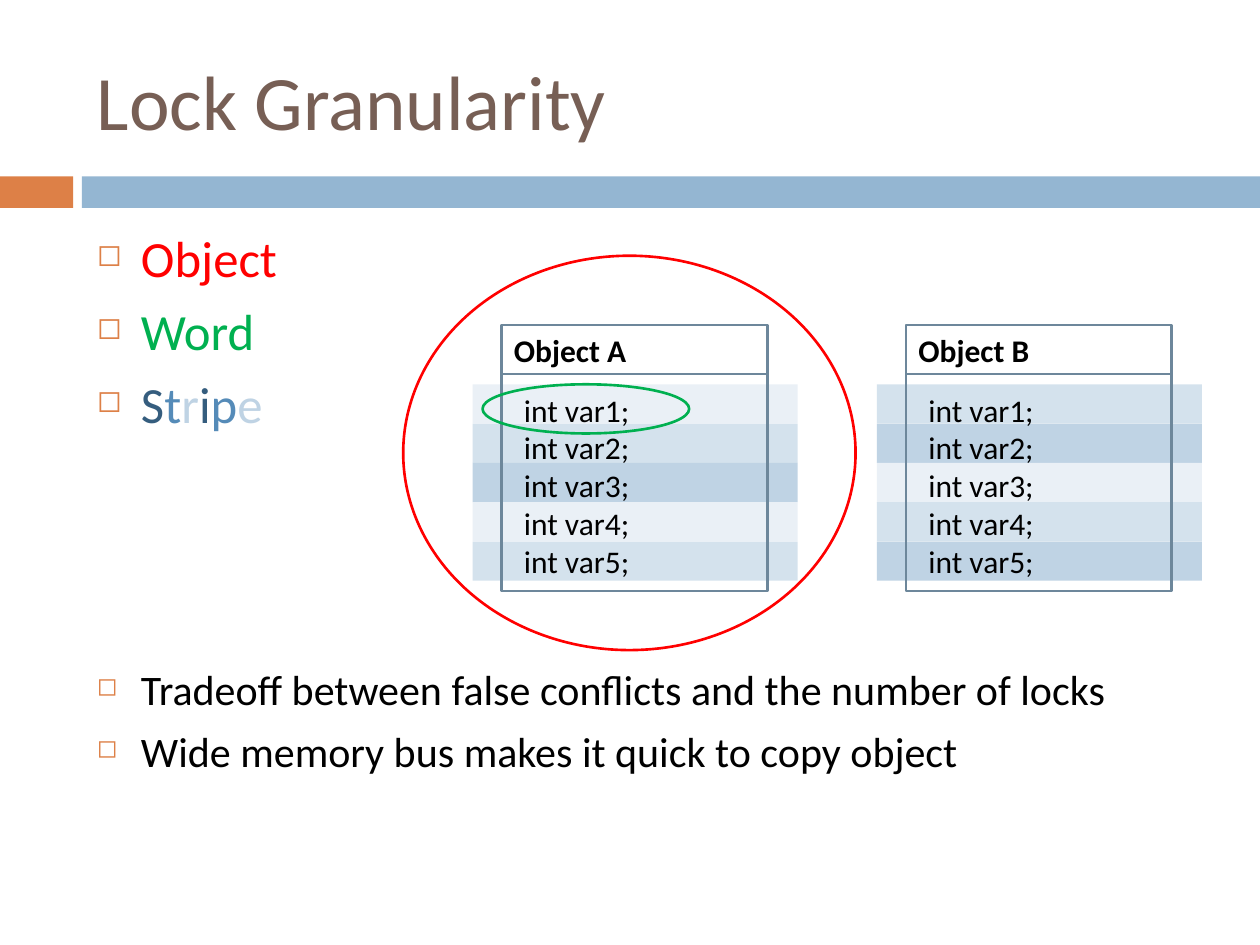
from dataclasses import dataclass
from itertools import cycle

from lxml import etree
from pptx import Presentation
from pptx import util as u
from pptx.dml.color import RGBColor
from pptx.enum import shapes, text
from pptx.oxml.ns import qn


@dataclass
class Theme:
    font: str = "Calibri"
    title: str = "775F55"
    orange: str = "DD8047"
    blue: str = "94B6D2"
    frame: str = "6D879B"
    red: str = "FF0000"
    green: str = "00B050"
    black: str = "000000"
    shades: tuple = ("EAF0F6", "D4E2ED", "BFD3E4")
    letters: tuple = ("355D7E", "558BB8", "BFD3E4")
    title_size: int = 44
    topic_size: int = 29
    note_size: int = 24
    code_size: int = 18
    line: float = 1.5


theme = Theme()
prs = Presentation()
prs.slide_width, prs.slide_height = u.Inches(10), u.Inches(7.5)
s = prs.slides.add_slide(prs.slide_layouts[6])


def add_shape(kind, x, y, w, h, fill=None, line=None):
    sp = s.shapes.add_shape(kind, u.Inches(x), u.Inches(y), u.Inches(w), u.Inches(h))
    sp.shadow.inherit = False
    if fill:
        sp.fill.solid()
        sp.fill.fore_color.rgb = RGBColor.from_string(fill)
    else:
        sp.fill.background()
    if line:
        sp.line.color.rgb = RGBColor.from_string(line)
        sp.line.width = u.Pt(theme.line)
    else:
        sp.line.fill.background()


def add_text(x, y, w, h, paragraphs, wrap=True, bold=False):
    tf = s.shapes.add_textbox(u.Inches(x), u.Inches(y), u.Inches(w), u.Inches(h)).text_frame
    tf.word_wrap = wrap
    for i, (size, runs) in enumerate(paragraphs):
        p = tf.add_paragraph() if i else tf.paragraphs[0]
        for words, color in runs:
            r = p.add_run()
            r.text = words
            r.font.name = theme.font
            r.font.size = u.Pt(size)
            r.font.bold = bold
            r.font.color.rgb = RGBColor.from_string(color)
    return tf


rect, oval = shapes.MSO_SHAPE.RECTANGLE, shapes.MSO_SHAPE.OVAL
add_shape(rect, 0, 1.4, 0.58, 0.25, fill=theme.orange)
add_shape(rect, 0.65, 1.4, 9.35, 0.25, fill=theme.blue)

tf = add_text(0.67, 0.25, 8.92, 1.08, [(theme.title_size, [("Lock Granularity", theme.title)])])
tf.vertical_anchor = text.MSO_ANCHOR.MIDDLE

box_top, box_size, stripe_top, rows = 2.58, 2.11, 3.05, 5
stripe_height = 1.56 / rows
code = [(theme.code_size, [(f"int var{n};", theme.black)]) for n in range(1, rows + 1)]

for name, x, first_shade in (("Object A", 3.98, 0), ("Object B", 7.19, 1)):
    for row in range(rows):
        shade = theme.shades[(first_shade + row) % len(theme.shades)]
        add_shape(rect, x - 0.23, stripe_top + row * stripe_height, 2.58, stripe_height, fill=shade)
    add_shape(rect, x, box_top, box_size, box_size, line=theme.frame)
    c = s.shapes.add_connector(shapes.MSO_CONNECTOR.STRAIGHT, u.Inches(x), u.Inches(2.97),
                               u.Inches(x + box_size), u.Inches(2.97))
    c.line.color.rgb = RGBColor.from_string(theme.frame)
    c.line.width = u.Pt(theme.line)
    etree.SubElement(c.element.spPr, qn("a:effectLst"))
    add_text(x, box_top, 1.12, 0.4, [(theme.code_size, [(name, theme.black)])], wrap=False, bold=True)
    add_text(x + 0.08, stripe_top, 1.04, 1.92, code, wrap=False)

add_shape(oval, 3.2, 2.03, 3.59, 3.13, line=theme.red)
add_shape(oval, 3.83, 3.05, 1.64, 0.39, line=theme.green)

bullets = [
    (theme.topic_size, [("Object", theme.red)]),
    (theme.topic_size, [("Word", theme.green)]),
    (theme.topic_size, list(zip("Stripe", cycle(theme.letters)))),
    (theme.note_size, [("Tradeoff between false conflicts and the number of locks", theme.black)]),
    (theme.note_size, [("Wide memory bus makes it quick to copy object", theme.black)]),
]
tf = add_text(0.67, 1.75, 8.92, 4.92, bullets)
for p, gap in zip(tf.paragraphs, (7, 7, 7, 131, 7)):
    p.space_before = u.Pt(gap)
    pPr = p._p.get_or_add_pPr()
    pPr.set("marL", str(u.Inches(0.35)))
    pPr.set("indent", str(-u.Inches(0.35)))
    color = etree.SubElement(pPr, qn("a:buClr"))
    etree.SubElement(color, qn("a:srgbClr"), val=theme.orange)
    etree.SubElement(pPr, qn("a:buSzPct"), val="60000")
    etree.SubElement(pPr, qn("a:buChar"), char="◻")

prs.save("out.pptx")
